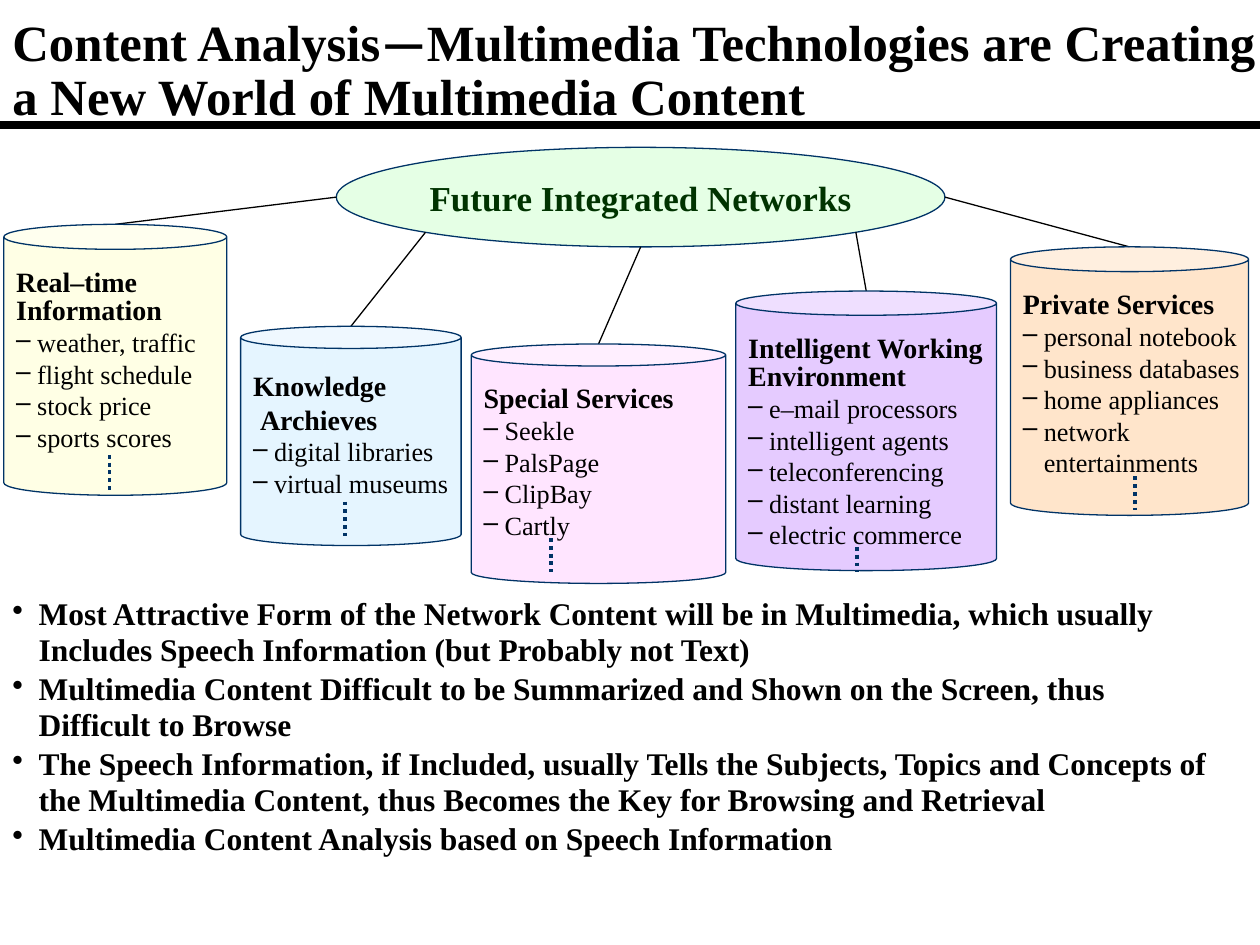
from math import cos, radians, sin

from lxml import etree
from pptx import Presentation
from pptx.dml.color import RGBColor
from pptx.enum.dml import MSO_LINE
from pptx.enum.shapes import MSO_CONNECTOR, MSO_SHAPE
from pptx.enum.text import MSO_ANCHOR, MSO_AUTO_SIZE, PP_ALIGN
from pptx.oxml.ns import qn
from pptx.util import Pt

STRAIGHT = MSO_CONNECTOR.STRAIGHT
ELLIPSE, CAN = MSO_SHAPE.OVAL, MSO_SHAPE.CAN
DOTTED = MSO_LINE.ROUND_DOT
TOP, MIDDLE = MSO_ANCHOR.TOP, MSO_ANCHOR.MIDDLE
LEFT, CENTER = PP_ALIGN.LEFT, PP_ALIGN.CENTER
GROW = MSO_AUTO_SIZE.SHAPE_TO_FIT_TEXT

SERIF, SANS = "Times New Roman", "Calibri"
BLACK, NAVY, GREEN = "000000", "003366", "003300"
DASH_INDENT = 12

TITLE = [
    ("Content Analysis", SERIF),
    ("—", SANS),
    ("Multimedia Technologies are Creating a New World of Multimedia Content", SERIF),
]
POINTS = [
    "Most Attractive Form of the Network Content will be in Multimedia, which usually "
    "Includes Speech Information (but Probably not Text)",
    "Multimedia Content Difficult to be Summarized and Shown on the Screen, thus "
    "Difficult to Browse",
    "The Speech Information, if Included, usually Tells the Subjects, Topics and Concepts of "
    "the Multimedia Content, thus Becomes the Key for Browsing and Retrieval",
    "Multimedia Content Analysis based on Speech Information",
]
NETWORK_BOX = (192.2, 84.2, 347.8, 56.9)
SERVICES = [
    dict(box=(2.2, 128.2, 127.4, 154.8), rim=0.112, color="FFFFCC", angle=180,
         heading=[("Real–time", 0), ("Information", 0)], spacing=0.85,
         items=["weather, traffic", "flight schedule", "stock price", "sports scores"],
         dots=(62.6, 259.9, 20.2)),
    dict(box=(137.5, 186.5, 126, 125.3), rim=0.101, color="CCECFF", angle=135,
         heading=[("Knowledge", 0), ("Archieves", 4)], spacing=1,
         items=["digital libraries", "virtual museums"],
         dots=(197.3, 286.6, 19.4)),
    dict(box=(269.3, 196.6, 145.4, 136.8), rim=0.092, color="FFCCFF", angle=90,
         heading=[("Special Services", 0)], spacing=0.85,
         items=["Seekle", "PalsPage", "ClipBay", "Cartly"],
         dots=(315, 307.4, 19.4)),
    dict(box=(420.5, 166.3, 149, 159.8), rim=0.093, color="CC99FF", angle=45,
         heading=[("Intelligent Working", 0), ("Environment", 0)], spacing=0.85,
         items=["e–mail processors", "intelligent agents", "teleconferencing",
                "distant learning", "electric commerce"],
         dots=(489.6, 312.5, 14.4)),
    dict(box=(577.4, 141.1, 136.1, 153.4), rim=0.104, color="FFCC99", angle=0,
         heading=[("Private Services", 0)], spacing=0.85,
         items=["personal notebook", "business databases", "home appliances", "network"],
         closing="entertainments",
         dots=(648.4, 272.2, 19.4)),
]


def rgb(value):
    return RGBColor.from_string(value)


def apply(target, values):
    for name, value in values.items():
        setattr(target, name, value)


def add_span(para, text, size, bold=True, color=BLACK, font=SERIF):
    span = para.add_run()
    span.text = text
    apply(span.font, dict(name=font, size=Pt(size), bold=bold))
    span.font.color.rgb = rgb(color)


def set_indent(para, left, first=0, bullet=None):
    props = para._p.get_or_add_pPr()
    props.set("marL", str(Pt(left)))
    props.set("indent", str(Pt(first)))
    if bullet:
        etree.SubElement(props, qn("a:buChar")).set("char", bullet)


def next_para(frame):
    first = frame.paragraphs[0]
    return frame.add_paragraph() if first.runs else first


def add_line(page, start, end, color=BLACK, width=0.75, dash=None):
    line = page.shapes.add_connector(STRAIGHT, *map(Pt, (*start, *end)))
    line.line.color.rgb = rgb(color)
    line.line.width = Pt(width)
    if dash:
        line.line.dash_style = dash
    etree.SubElement(line._element.spPr, qn("a:effectLst"))


def add_solid(page, kind, box, color):
    shape = page.shapes.add_shape(kind, *map(Pt, box))
    shape.shadow.inherit = False
    shape.fill.solid()
    shape.fill.fore_color.rgb = rgb(color)
    tint = shape._element.spPr.find(".//" + qn("a:srgbClr"))
    etree.SubElement(tint, qn("a:alpha")).set("val", "50000")
    shape.line.color.rgb = rgb(NAVY)
    shape.line.width = Pt(0.75)
    return shape


def add_text_frame(page, box, anchor):
    frame = page.shapes.add_textbox(*map(Pt, box)).text_frame
    apply(frame, dict(word_wrap=True, auto_size=GROW, vertical_anchor=anchor))
    return frame


def add_title(page, box):
    para = add_text_frame(page, box, MIDDLE).paragraphs[0]
    para.line_spacing = 0.9
    for text, font in TITLE:
        add_span(para, text, 29, font=font)


def add_points(page, box):
    frame = add_text_frame(page, box, TOP)
    for text in POINTS:
        para = next_para(frame)
        apply(para, dict(line_spacing=0.95, space_before=Pt(1.8)))
        set_indent(para, 15, -15, "•")
        add_span(para, text, 18)


def add_network(page, box):
    frame = add_solid(page, ELLIPSE, box, "CCFFCC").text_frame
    apply(frame, dict(word_wrap=False, vertical_anchor=MIDDLE))
    para = frame.paragraphs[0]
    para.alignment = CENTER
    add_span(para, "Future Integrated Networks", 20, color=GREEN)


def add_service(page, box, rim, color, heading, spacing, items, dots, closing=None):
    can = add_solid(page, CAN, box, color)
    can.adjustments[0] = rim
    frame = can.text_frame
    apply(frame, dict(word_wrap=False, vertical_anchor=TOP, margin_top=Pt(11.5)))
    for text, indent in heading:
        para = next_para(frame)
        apply(para, dict(alignment=LEFT, line_spacing=spacing))
        set_indent(para, indent)
        add_span(para, text, 16)
    rows = [(text, -DASH_INDENT, "–") for text in items]
    if closing:
        rows.append((closing, 0, None))
    for text, first, bullet in rows:
        para = next_para(frame)
        para.alignment = LEFT
        set_indent(para, DASH_INDENT, first, bullet)
        add_span(para, text, 15, bold=False)
    x, y, length = dots
    add_line(page, (x, y), (x, y + length), NAVY, 2.25, DOTTED)


def add_link(page, network_box, service_box, angle):
    left, top, width, height = network_box
    start = (left + width / 2 * (1 + cos(radians(angle))),
             top + height / 2 * (1 + sin(radians(angle))))
    end = (service_box[0] + service_box[2] / 2, service_box[1])
    add_line(page, start, end)


def main():
    deck = Presentation()
    apply(deck, dict(slide_width=Pt(720), slide_height=Pt(540)))
    page = deck.slides.add_slide(deck.slide_layouts[6])
    add_title(page, (0, 5.8, 740, 70.6))
    add_points(page, (0, 337.7, 705.6, 157))
    add_network(page, NETWORK_BOX)
    for service in SERVICES:
        details = dict(service)
        add_link(page, NETWORK_BOX, service["box"], details.pop("angle"))
        add_service(page, **details)
    add_line(page, (0, 71.3), (720, 71.3), width=4.5)
    deck.save("out.pptx")


if __name__ == "__main__":
    main()
